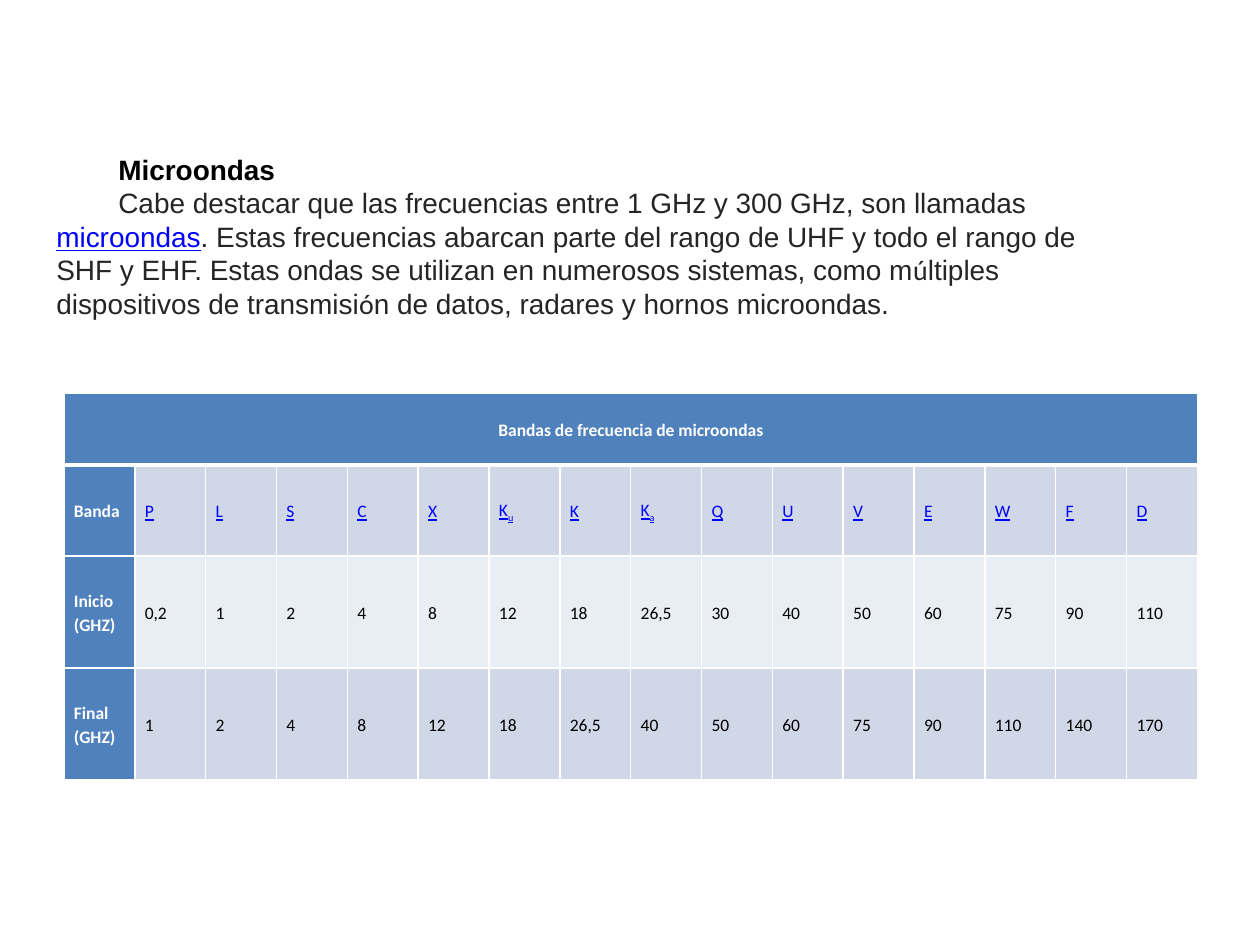
from lxml import etree
from pptx import Presentation
from pptx.dml.color import RGBColor
from pptx.enum.text import MSO_ANCHOR, PP_ALIGN
from pptx.oxml.ns import qn
from pptx.util import Emu, Pt

PX = 914400 // 126
MIDDLE, TOP = MSO_ANCHOR.MIDDLE, MSO_ANCHOR.TOP
LEFT, CENTER = PP_ALIGN.LEFT, PP_ALIGN.CENTER

WHITE = RGBColor(0xFF, 0xFF, 0xFF)
BLACK = RGBColor(0x00, 0x00, 0x00)
INK = RGBColor(0x25, 0x25, 0x25)
LINK = RGBColor(0x00, 0x00, 0xFF)
HEADER = RGBColor(0x4F, 0x81, 0xBD)
BAND_DARK = RGBColor(0xD0, 0xD8, 0xE8)
BAND_LIGHT = RGBColor(0xE9, 0xED, 0xF4)

TITLE = "Bandas de frecuencia de microondas"
BANDS = ["P", "L", "S", "C", "X", "Ku", "K", "Ka", "Q", "U", "V", "E", "W", "F", "D"]
STARTS = ["0,2", "1", "2", "4", "8", "12", "18", "26,5", "30", "40", "50", "60",
          "75", "90", "110"]
ENDS = ["1", "2", "4", "8", "12", "18", "26,5", "40", "50", "60", "75", "90",
        "110", "140", "170"]
# label, values, fill, text colour, underlined
ROWS = [("Banda", BANDS, BAND_DARK, LINK, True),
        ("Inicio (GHZ)", STARTS, BAND_LIGHT, BLACK, False),
        ("Final (GHZ)", ENDS, BAND_DARK, BLACK, False)]
ROW_HEIGHTS = [72, 91, 112, 112]
TABLE_WIDTH = 1134

# text, font, colour, underlined
BODY = [
    ("Cabe destacar que las frecuencias entre 1 GHz y 300 GHz, son llamadas ",
     "Arial", INK, False),
    ("microondas", "Arial", LINK, True),
    (". Estas frecuencias abarcan parte del rango de UHF y todo el rango de SHF y EHF. "
     "Estas ondas se utilizan en numerosos sistemas, como m", "Arial", INK, False),
    ("ú", "Calibri", INK, False),
    ("ltiples dispositivos de transmisi", "Arial", INK, False),
    ("ó", "Calibri", INK, False),
    ("n de datos, radares y hornos microondas.", "Arial", INK, False),
]


def px(n):
    return Emu(n * PX)


def set_font(font, name, size, color, bold=False, underline=False):
    font.name, font.size = name, Pt(size)
    font.color.rgb = color
    font.bold, font.underline = bold, underline


def add_intro(s):
    tf = s.shapes.add_textbox(px(44), px(146), px(1101), px(220)).text_frame
    tf.word_wrap = True
    tf.vertical_anchor = TOP
    heading, body = tf.paragraphs[0], tf.add_paragraph()
    for p in (heading, body):
        p._p.get_or_add_pPr().set("indent", str(px(62)))
    heading.text = "Microondas"
    set_font(heading.font, "Arial", 16, BLACK, bold=True)
    for text, name, color, underline in BODY:
        r = body.add_run()
        r.text = text
        set_font(r.font, name, 16, color, underline=underline)


def set_borders(cell, **widths):
    tc_pr = cell._tc.get_or_add_tcPr()
    for side in "LRTB":
        ln = etree.SubElement(tc_pr, qn("a:ln" + side), w=str(Pt(widths.get(side, 1))))
        fill = etree.SubElement(ln, qn("a:solidFill"))
        etree.SubElement(fill, qn("a:srgbClr"), val=str(WHITE))


def style_cell(cell, fill, **borders):
    set_borders(cell, **borders)
    cell.fill.solid()
    cell.fill.fore_color.rgb = fill
    cell.vertical_anchor = MIDDLE
    cell.margin_left = cell.margin_right = px(10)
    cell.margin_top = cell.margin_bottom = px(10)


def write_cell(cell, text, color, bold=False, underline=False, align=LEFT):
    p = cell.text_frame.paragraphs[0]
    p.alignment, p.line_spacing = align, 1.15
    p.space_before = p.space_after = Pt(6)
    set_font(p.font, "Calibri", 10, color, bold, underline)
    # Two-letter band names carry a subscript
    parts = list(text) if text in ("Ku", "Ka") else [text]
    for i, part in enumerate(parts):
        r = p.add_run()
        r.text = part
        set_font(r.font, "Calibri", 10, color, bold, underline)
        if i:
            r._r.get_or_add_rPr().set("baseline", "-25000")


def add_band_table(s):
    n_cols = len(BANDS) + 1
    table = s.shapes.add_table(len(ROW_HEIGHTS), n_cols, px(64), px(393),
                               px(TABLE_WIDTH), px(sum(ROW_HEIGHTS))).table
    table.first_row = table.horz_banding = False
    for col in table.columns:
        col.width = px(TABLE_WIDTH) // n_cols
    for row, height in zip(table.rows, ROW_HEIGHTS):
        row.height = px(height)

    # Title row across all columns
    for cell in table.rows[0].cells:
        style_cell(cell, HEADER, B=3)
    table.cell(0, 0).merge(table.cell(0, n_cols - 1))
    write_cell(table.cell(0, 0), TITLE, WHITE, bold=True, align=CENTER)

    # Label column and values
    for i, (label, values, fill, color, underline) in enumerate(ROWS, 1):
        top = 3 if i == 1 else 1
        style_cell(table.cell(i, 0), HEADER, T=top)
        write_cell(table.cell(i, 0), label, WHITE, bold=True)
        for j, value in enumerate(values, 1):
            style_cell(table.cell(i, j), fill, T=top)
            write_cell(table.cell(i, j), value, color, underline=underline)


def main():
    prs = Presentation()
    prs.slide_width, prs.slide_height = px(1260), px(945)
    s = prs.slides.add_slide(prs.slide_layouts[6])
    add_band_table(s)
    add_intro(s)
    prs.save("out.pptx")


if __name__ == "__main__":
    main()
